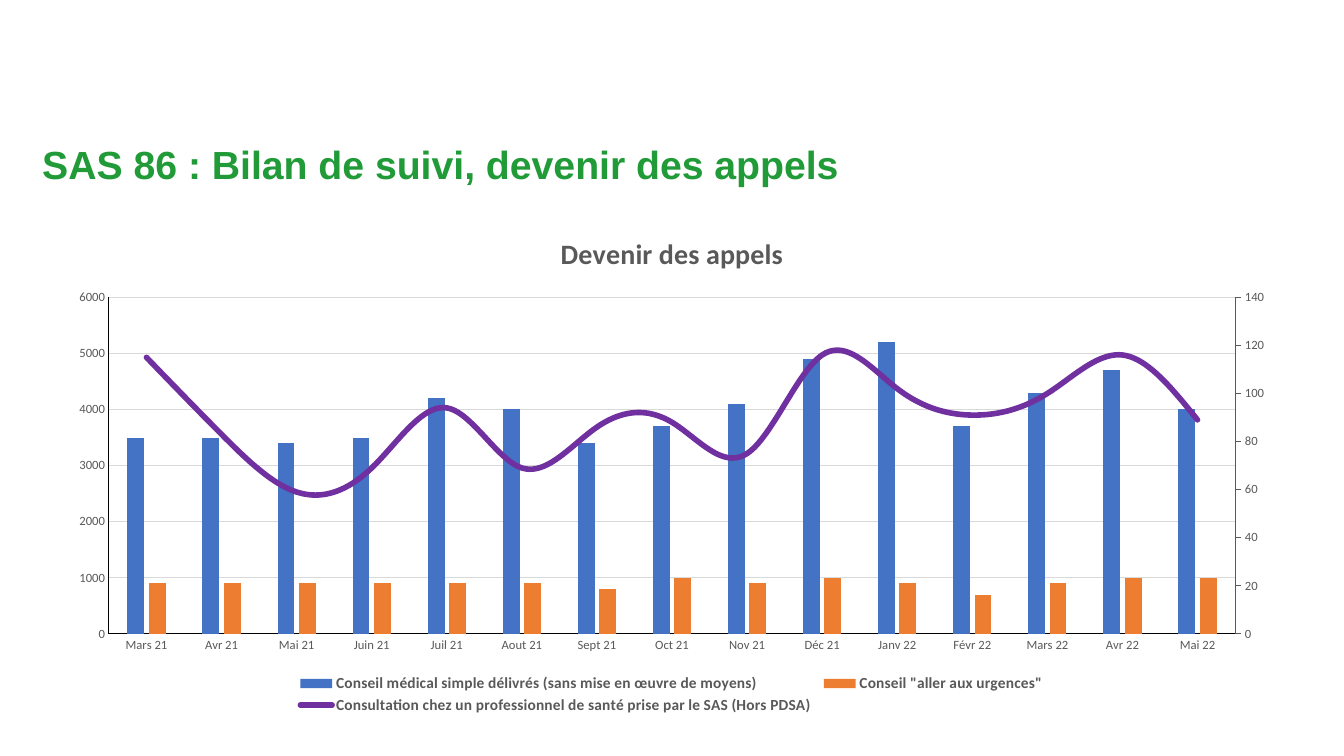
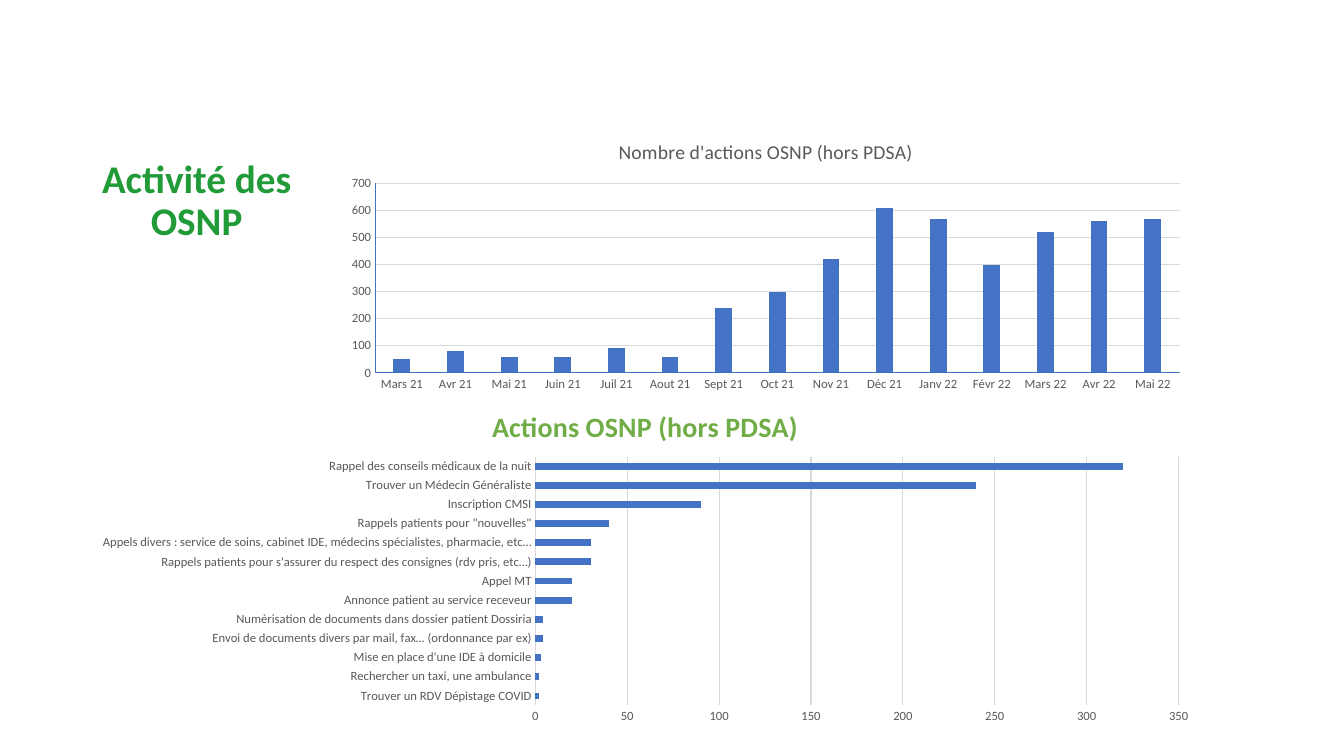
from pptx import Presentation
from pptx.util import Pt
from pptx.dml.color import RGBColor
from pptx.chart.data import CategoryChartData as Data
from pptx.chart.axis import ValueAxis
from pptx.enum.chart import XL_CHART_TYPE as Kind, XL_LEGEND_POSITION as Pos
from pptx.enum.chart import XL_TICK_MARK as Tick, XL_MARKER_STYLE as Mark
from pptx.enum.text import PP_ALIGN as Align
from pptx.oxml import parse_xml
from pptx.oxml.ns import nsdecls

PX = 9144
HUE = {
    "green": "209B38", "lime": "70AD47", "text": "595959", "grid": "D9D9D9",
    "blue": "4472C4", "orange": "ED7D31", "purple": "7030A0", "black": "000000",
}
MONTHS = [
    "Mars 21", "Avr 21", "Mai 21", "Juin 21", "Juil 21", "Aout 21", "Sept 21",
    "Oct 21", "Nov 21", "Déc 21", "Janv 22", "Févr 22", "Mars 22", "Avr 22", "Mai 22",
]
TASKS = [
    ("Trouver un RDV Dépistage COVID", 2),
    ("Rechercher un taxi, une ambulance", 2),
    ("Mise en place d'une IDE à domicile", 3),
    ("Envoi de documents divers par mail, fax… (ordonnance par ex)", 4),
    ("Numérisation de documents dans dossier patient Dossiria", 4),
    ("Annonce patient au service receveur", 20),
    ("Appel MT", 20),
    ("Rappels patients pour s'assurer du respect des consignes (rdv pris, etc…)", 30),
    ("Appels divers : service de soins, cabinet IDE, médecins spécialistes, pharmacie, etc…", 30),
    ("Rappels patients pour \"nouvelles\"", 40),
    ("Inscription CMSI", 90),
    ("Trouver un Médecin Généraliste", 240),
    ("Rappel des conseils médicaux de la nuit", 320),
]
CALLS = {
    "kind": Kind.COLUMN_CLUSTERED, "box": (54, 211, 1225, 503),
    "plot": (108, 295, 1117, 334),
    "title": ("Devenir des appels", 20, True, "text", (551, 227)),
    "cats": MONTHS, "gap": 219, "overlap": -27, "top": 6000, "step": 1000,
    "lines": ("black", "black"),
    "series": [
        ("Conseil médical simple délivrés (sans mise en œuvre de moyens)", "blue",
         [3500, 3500, 3400, 3500, 4200, 4000, 3400, 3700, 4100, 4900, 5200, 3700,
          4300, 4700, 4000]),
        ("Conseil \"aller aux urgences\"", "orange",
         [900, 900, 900, 900, 900, 900, 800, 1000, 900, 1000, 900, 700, 900, 1000, 1000]),
        ("Consultation chez un professionnel de santé prise par le SAS (Hors PDSA)", "purple",
         [115, 83, 59, 69, 94, 69, 86, 88, 75, 116, 102, 91, 100, 116, 89]),
    ],
}
COUNT = {
    "kind": Kind.COLUMN_CLUSTERED, "box": (332, 123, 856, 270),
    "plot": (372, 182, 798, 188),
    "title": ("Nombre d'actions OSNP (hors PDSA)", 14, False, "text", (610, 134)),
    "cats": MONTHS, "gap": 219, "overlap": -27, "top": 700, "step": 100,
    "lines": ("blue", "blue"),
    "series": [("Actions", "blue",
                [50, 80, 60, 60, 90, 60, 240, 300, 420, 610, 570, 400, 520, 560, 570])],
}
DETAIL = {
    "kind": Kind.BAR_CLUSTERED, "box": (80, 390, 1122, 335),
    "plot": (531, 453, 638, 247),
    "title": ("Actions OSNP (hors PDSA)", 20, True, "lime", (483, 399)),
    "cats": [name for name, val in TASKS], "gap": 182, "overlap": 0,
    "top": 350, "step": 50, "lines": ("grid", None),
    "series": [("Actions", "blue", [val for name, val in TASKS])],
}
LEGEND = (291, 666, 750, 46)


def rgb(name):
    return RGBColor.from_string(HUE[name])


def style(font, size, color, bold=False, face="Calibri"):
    font.size, font.bold, font.name = Pt(size), bold, face
    font.color.rgb = rgb(color)


def head(slide, text, box, face, align):
    frame = slide.shapes.add_textbox(*[n * PX for n in box]).text_frame
    frame.word_wrap = True
    para = frame.paragraphs[0]
    para.alignment, para.line_spacing = align, 0.9
    run = para.add_run()
    run.text = text
    style(run.font, 28, "green", True, face)


def place(host, box, area, index):
    for old in host.xpath("./c:layout"):
        host.remove(old)
    left, top, wide, high = area
    parts = [(box[0] - left) / wide, (box[1] - top) / high]
    parts += [n / full for n, full in zip(box[2:], (wide, high))]
    keys = "xywh"[:len(parts)]
    inner = '<c:layoutTarget val="inner"/>' if index == 0 else ""
    modes = "".join(f'<c:{k}Mode val="{"edge" if k in "xy" else "factor"}"/>' for k in keys)
    vals = "".join(f'<c:{k} val="{v:.5f}"/>' for k, v in zip(keys, parts))
    host.insert(index, parse_xml(
        f'<c:layout {nsdecls("c")}><c:manualLayout>{inner}{modes}{vals}'
        '</c:manualLayout></c:layout>'))


def dress(axis, color, tick=Tick.NONE):
    axis.major_tick_mark, axis.minor_tick_mark = tick, Tick.NONE
    style(axis.tick_labels.font, 9, "text")
    line = axis.format.line
    if color:
        line.color.rgb, line.width = rgb(color), Pt(0.75)
    else:
        line.fill.background()


def scale(axis, top, step):
    axis.minimum_scale, axis.maximum_scale, axis.major_unit = 0, top, step


def draw(slide, item):
    data = Data()
    data.categories = item["cats"]
    for name, color, vals in item["series"]:
        data.add_series(name, vals)
    box = item["box"]
    chart = slide.shapes.add_chart(item["kind"], *[n * PX for n in box], data).chart
    style(chart.font, 10, "black")
    chart.has_legend = False
    text, size, bold, color, spot = item["title"]
    chart.has_title = True
    run = chart.chart_title.text_frame.paragraphs[0].add_run()
    run.text = text
    style(run.font, size, color, bold)
    place(chart.chart_title.element, spot, box, 1)
    place(chart.element.xpath(".//c:plotArea")[0], item["plot"], box, 0)
    cat, val = item["lines"]
    dress(chart.category_axis, cat)
    dress(chart.value_axis, val)
    scale(chart.value_axis, item["top"], item["step"])
    chart.value_axis.has_major_gridlines = True
    grid = chart.value_axis.major_gridlines.format.line
    grid.color.rgb, grid.width = rgb("grid"), Pt(0.75)
    plot = chart.plots[0]
    plot.gap_width, plot.overlap, plot.vary_by_categories = item["gap"], item["overlap"], False
    for ser, (name, color, vals) in zip(plot.series, item["series"]):
        ser.format.fill.solid()
        ser.format.fill.fore_color.rgb = rgb(color)
    return chart


def curve(chart, color):
    area = chart.element.xpath(".//c:plotArea")[0]
    bars = area.xpath("./c:barChart")[0]
    ser = bars.xpath("./c:ser")[-1]
    for old in ser.xpath("./c:invertIfNegative | ./c:spPr"):
        ser.remove(old)
    line = parse_xml(
        f'<c:lineChart {nsdecls("c")}><c:grouping val="standard"/><c:varyColors val="0"/>'
        '<c:marker val="1"/><c:axId val="7001"/><c:axId val="7002"/></c:lineChart>')
    line.insert(2, ser)
    bars.addnext(line)
    right = parse_xml(
        f'<c:valAx {nsdecls("c")}><c:axId val="7002"/><c:scaling/><c:delete val="0"/>'
        '<c:axPos val="r"/><c:numFmt formatCode="General" sourceLinked="0"/>'
        '<c:majorTickMark val="out"/><c:minorTickMark val="none"/>'
        '<c:tickLblPos val="nextTo"/><c:crossAx val="7001"/><c:crosses val="max"/></c:valAx>')
    under = parse_xml(
        f'<c:catAx {nsdecls("c")}><c:axId val="7001"/><c:scaling/><c:delete val="1"/>'
        '<c:axPos val="b"/><c:crossAx val="7002"/><c:crosses val="autoZero"/></c:catAx>')
    area.xpath("./c:valAx")[0].addnext(right)
    right.addnext(under)
    axis = ValueAxis(right)
    dress(axis, "text", Tick.OUTSIDE)
    scale(axis, 140, 20)
    trend = chart.plots[1].series[0]
    trend.smooth, trend.marker.style = True, Mark.NONE
    trend.format.line.color.rgb, trend.format.line.width = rgb(color), Pt(4)
    ser.xpath("./c:spPr/a:ln")[0].set("cap", "rnd")


def main():
    deck = Presentation()
    deck.slide_width, deck.slide_height = 1333 * PX, 750 * PX
    first, second = [deck.slides.add_slide(deck.slide_layouts[6]) for n in range(2)]

    head(first, "SAS 86 : Bilan de suivi, devenir des appels",
         (32, 140, 1225, 72), "Arial", Align.LEFT)
    chart = draw(first, CALLS)
    curve(chart, "purple")
    chart.has_legend = True
    chart.legend.position, chart.legend.include_in_layout = Pos.BOTTOM, False
    style(chart.legend.font, 11, "text", True)
    place(chart.element.xpath(".//c:legend")[0], LEGEND, CALLS["box"], 1)

    head(second, "Activité des OSNP", (80, 153, 230, 156), "Calibri", Align.CENTER)
    for item in (COUNT, DETAIL):
        draw(second, item)
    deck.save("out.pptx")


if __name__ == "__main__":
    main()
